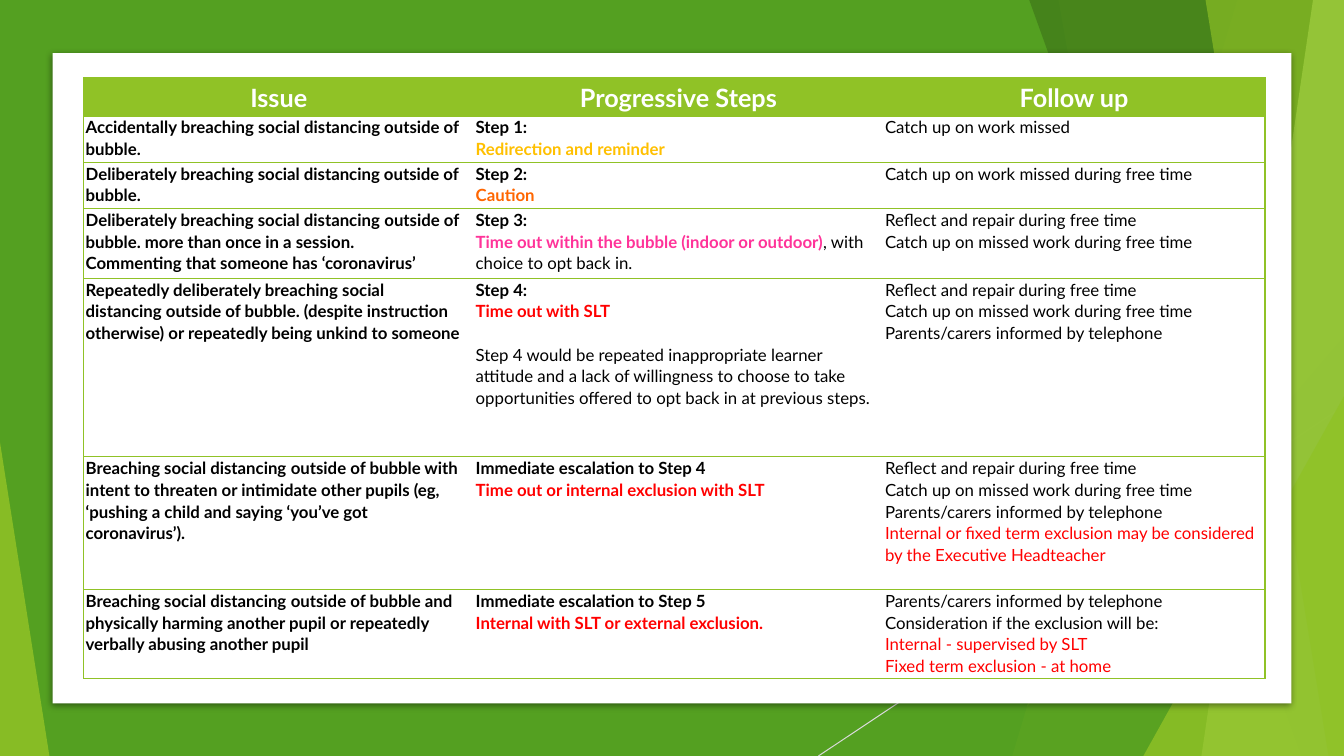
import collections
import dataclasses

import lxml.etree
import pptx
import pptx.dml.color
import pptx.enum.shapes
import pptx.enum.text
import pptx.oxml.ns
import pptx.util

Run = collections.namedtuple("Run", "text color bold")
Para = collections.namedtuple("Para", "runs before", defaults=[0])


@dataclasses.dataclass(frozen=True)
class Theme:
    font: str = "Lato"
    heading_size: float = 18
    body_size: float = 12
    line_spacing: float = 1.07
    white: str = "FFFFFF"
    black: str = "000000"
    green: str = "54A021"
    lime: str = "90C226"
    forest: str = "3F7819"
    pale_lime: str = "C0E474"
    ray: str = "D9D9D9"
    amber: str = "FFC000"
    orange: str = "FF6600"
    pink: str = "FF3399"
    red: str = "FF0000"


THEME = Theme()
WIDTH, HEIGHT = 960, 540


def strong(text, color=THEME.black):
    return Para([Run(text, color, True)])


def plain(text, color=THEME.black, before=0):
    return Para([Run(text, color, False)], before)


def rgb(color):
    return pptx.dml.color.RGBColor.from_string(color)


def child(parent, tag, **attributes):
    element = lxml.etree.SubElement(parent, pptx.oxml.ns.qn(tag))
    for name, value in attributes.items():
        element.set(name, str(value))
    return element


class Canvas:
    def __init__(self, slide, theme):
        self.slide = slide
        self.theme = theme

    def paint(self, shape, color, opacity=100):
        shape.shadow.inherit = False
        shape.fill.solid()
        shape.fill.fore_color.rgb = rgb(color)
        shape.line.fill.background()
        if opacity < 100:
            tint = shape._element.spPr.find(".//" + pptx.oxml.ns.qn("a:srgbClr"))
            child(tint, "a:alpha", val=opacity * 1000)
        return shape

    def preset(self, kind, box, color, opacity=100):
        shape = self.slide.shapes.add_shape(kind, *map(pptx.util.Pt, box))
        return self.paint(shape, color, opacity)

    def rectangle(self, box, color):
        return self.preset(pptx.enum.shapes.MSO_SHAPE.RECTANGLE, box, color)

    def corner(self, box, apex, color, opacity):
        triangle = self.preset(pptx.enum.shapes.MSO_SHAPE.ISOSCELES_TRIANGLE, box, color, opacity)
        triangle.adjustments[0] = apex

    def band(self, top_x, bottom_x, color, opacity):
        points = [(top_x, -0.6), (WIDTH, -0.6), (WIDTH, HEIGHT), (bottom_x, HEIGHT)]
        start, *rest = [tuple(map(pptx.util.Pt, point)) for point in points]
        outline = self.slide.shapes.build_freeform(*start)
        outline.add_line_segments(rest, close=True)
        self.paint(outline.convert_to_shape(), color, opacity)

    def line(self, start, end, color, width):
        ray = self.slide.shapes.add_connector(
            pptx.enum.shapes.MSO_CONNECTOR.STRAIGHT, *map(pptx.util.Pt, start + end))
        ray.line.color.rgb = rgb(color)
        ray.line.width = pptx.util.Pt(width)
        child(ray._element.spPr, "a:effectLst")

    def card(self, box, color):
        card = self.rectangle(box, color)
        effects = card._element.spPr.find(pptx.oxml.ns.qn("a:effectLst"))
        shadow = child(effects, "a:outerShdw", blurRad=pptx.util.Pt(5), dist=pptx.util.Pt(1.4),
                       dir=90 * 60000, algn="t", rotWithShape=0)
        child(child(shadow, "a:srgbClr", val=self.theme.black), "a:alpha", val=43000)

    def cell_text(self, cell, paras, size, align, anchor):
        cell.margin_left = cell.margin_right = pptx.util.Pt(1.4)
        cell.margin_top = cell.margin_bottom = 0
        cell.vertical_anchor = anchor
        frame = cell.text_frame
        for index, para in enumerate(paras):
            paragraph = frame.add_paragraph() if index else frame.paragraphs[0]
            paragraph.alignment = align
            paragraph.line_spacing = self.theme.line_spacing
            if para.before:
                paragraph.space_before = pptx.util.Pt(para.before)
            for part in para.runs:
                run = paragraph.add_run()
                run.text = part.text
                run.font.name = self.theme.font
                run.font.size = pptx.util.Pt(size)
                run.font.bold = part.bold
                run.font.color.rgb = rgb(part.color)

    def border(self, cell, shown_sides):
        properties = cell._tc.get_or_add_tcPr()
        for side in "LRTB":
            edge = child(properties, "a:ln" + side, w=pptx.util.Pt(1))
            if side in shown_sides:
                child(child(edge, "a:solidFill"), "a:srgbClr", val=self.theme.lime)
            else:
                child(edge, "a:noFill")

    def table(self, left, top, widths, heights, headings, rows):
        box = (left, top, sum(widths), sum(heights))
        table = self.slide.shapes.add_table(
            len(heights), len(widths), *map(pptx.util.Pt, box)).table
        for column, width in zip(table.columns, widths):
            column.width = pptx.util.Pt(width)
        for row, height in zip(table.rows, heights):
            row.height = pptx.util.Pt(height)
        heading_row = [[strong(heading, self.theme.white)] for heading in headings]
        for r, row in enumerate([heading_row] + rows):
            for c, paras in enumerate(row):
                cell = table.cell(r, c)
                self.border(cell, "TB" + "L" * (c == 0) + "R" * (c == len(widths) - 1))
                if r == 0:
                    cell.fill.solid()
                    cell.fill.fore_color.rgb = rgb(self.theme.lime)
                    self.cell_text(cell, paras, self.theme.heading_size,
                                   pptx.enum.text.PP_ALIGN.CENTER,
                                   pptx.enum.text.MSO_ANCHOR.MIDDLE)
                else:
                    cell.fill.background()
                    self.cell_text(cell, paras, self.theme.body_size,
                                   pptx.enum.text.PP_ALIGN.LEFT, pptx.enum.text.MSO_ANCHOR.TOP)


OUTSIDE = "distancing outside of bubble".replace(" ", chr(160), 2)
REPAIR = plain("Reflect and repair during free time")
MISSED_WORK = plain("Catch up on missed work during free time")
PHONE_HOME = plain("Parents/carers informed by telephone")

HEADINGS = ["Issue", "Progressive Steps", "Follow up"]
BEHAVIOUR_STEPS = [
    [[strong(f"Accidentally breaching social {OUTSIDE}.".replace(chr(160), " "))],
     [strong("Step 1:"), strong("Redirection and reminder", THEME.amber)],
     [plain("Catch up on work missed")]],
    [[strong(f"Deliberately breaching social {OUTSIDE}.".replace(chr(160), " "))],
     [strong("Step 2:"), strong("Caution", THEME.orange)],
     [plain("Catch up on work missed during free time")]],
    [[strong(f"Deliberately breaching social {OUTSIDE}. more than once in a session."),
      strong("Commenting that someone has ‘coronavirus’")],
     [strong("Step 3:"),
      Para([Run("Time out within the bubble (indoor or outdoor)", THEME.pink, True),
            Run(", with choice to opt back in.", THEME.black, False)])],
     [REPAIR, MISSED_WORK]],
    [[strong(f"Repeatedly deliberately breaching social {OUTSIDE}. (despite instruction "
             "otherwise) or repeatedly being unkind to someone")],
     [strong("Step 4:"), strong("Time out with SLT", THEME.red),
      plain("Step 4 would be repeated inappropriate learner attitude and a lack of willingness "
            "to choose to take opportunities offered to opt back in at previous steps.",
            before=15.5)],
     [REPAIR, MISSED_WORK, PHONE_HOME]],
    [[strong(f"Breaching social {OUTSIDE} with intent to threaten or intimidate other pupils "
             "(eg, ‘pushing a child and saying ‘you’ve got coronavirus’).")],
     [strong("Immediate escalation to Step 4"),
      strong("Time out or internal exclusion with SLT", THEME.red)],
     [REPAIR, MISSED_WORK, PHONE_HOME,
      plain("Internal or fixed term exclusion may be considered by the Executive Headteacher",
            THEME.red)]],
    [[strong(f"Breaching social {OUTSIDE} and physically harming another pupil or repeatedly "
             "verbally abusing another pupil")],
     [strong("Immediate escalation to Step 5"),
      strong("Internal with SLT or external exclusion.", THEME.red)],
     [PHONE_HOME, plain("Consideration if the exclusion will be:"),
      plain("Internal - supervised by SLT", THEME.red),
      plain("Fixed term exclusion - at home", THEME.red)]],
]


def main():
    deck = pptx.Presentation()
    deck.slide_width, deck.slide_height = pptx.util.Pt(WIDTH), pptx.util.Pt(HEIGHT)
    canvas = Canvas(deck.slides.add_slide(deck.slide_layouts[6]), THEME)
    canvas.rectangle((0, 0, WIDTH, HEIGHT), THEME.green)
    canvas.line((WIDTH, 290), (584.6, HEIGHT), THEME.ray, 0.75)
    canvas.band(884.2, 723, THEME.lime, 30)
    canvas.band(756, 851.8, THEME.lime, 20)
    canvas.corner((703.5, 240, 256.5, 300), 1, THEME.green, 72)
    canvas.band(735, 929.5, THEME.forest, 70)
    canvas.band(938, 858.2, THEME.pale_lime, 70)
    canvas.band(861, 949, THEME.lime, 65)
    canvas.corner((816.7, 283, 143.3, 257), 1, THEME.lime, 80)
    canvas.corner((0, 316, 35.3, 224), 0, THEME.lime, 85)
    canvas.card((37.5, 38, 885, 464.5), THEME.white)
    canvas.table(59.8, 55.5, [278.6, 292.4, 272.8],
                 [27.3, 33.2, 33.2, 49.7, 127.5, 95, 63.6], HEADINGS, BEHAVIOUR_STEPS)
    deck.save("out.pptx")


if __name__ == "__main__":
    main()
